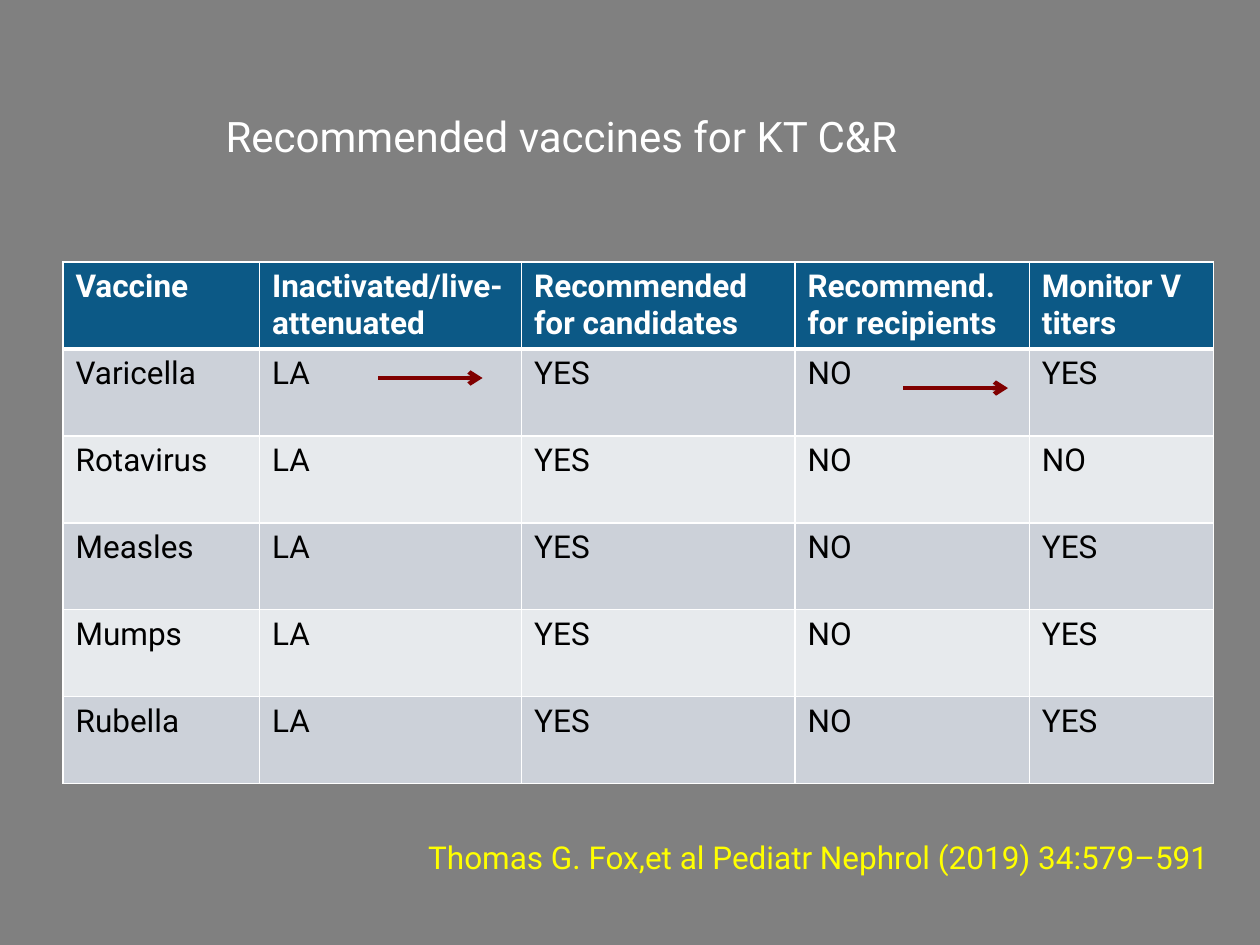
from lxml.etree import SubElement
from pptx import Presentation
from pptx.dml.color import RGBColor
from pptx.enum.shapes import MSO_CONNECTOR as Connector
from pptx.enum.text import MSO_AUTO_SIZE as AutoSize, PP_ALIGN as Align
from pptx.oxml.ns import qn
from pptx.util import Inches, Pt

# Content
TITLE = "Recommended vaccines for KT C&R"
CITATION = "Thomas G. Fox,et al Pediatr Nephrol (2019) 34:579–591"
ROWS = [
    ("Vaccine", "Inactivated/live-attenuated", "Recommended for candidates",
     "Recommend. for recipients", "Monitor V titers"),
    ("Varicella", "LA", "YES", "NO", "YES"),
    ("Rotavirus", "LA", "YES", "NO", "NO"),
    ("Measles", "LA", "YES", "NO", "YES"),
    ("Mumps", "LA", "YES", "NO", "YES"),
    ("Rubella", "LA", "YES", "NO", "YES"),
]
COLUMN_WIDTHS = [1.56, 2.08, 2.17, 1.86, 1.46]
ROW_HEIGHT = 0.69
ARROW_STARTS = [(7.17, 3.08), (3, 3)]
ARROW_LENGTH = 0.83

FONT = "Roboto"
GRAY = RGBColor(0x80, 0x80, 0x80)
WHITE = RGBColor(0xFF, 0xFF, 0xFF)
BLACK = RGBColor(0, 0, 0)
YELLOW = RGBColor(0xFF, 0xFF, 0)
DARK_RED = RGBColor(0x80, 0, 0)
HEADER_BLUE = RGBColor(0x0C, 0x59, 0x86)
BANDS = [RGBColor(0xE7, 0xEA, 0xED), RGBColor(0xCC, 0xD1, 0xD9)]


def write(frame, text, size=18, color=BLACK, bold=False, align=Align.LEFT):
    paragraph = frame.paragraphs[0]
    paragraph.alignment = align
    run = paragraph.add_run()
    run.text = text
    font = run.font
    font.name, font.size, font.bold = FONT, Pt(size), bold
    font.color.rgb = color


def add_label(slide, text, box, wrap=True, **text_format):
    frame = slide.shapes.add_textbox(*map(Inches, box)).text_frame
    frame.word_wrap = wrap
    frame.auto_size = AutoSize.SHAPE_TO_FIT_TEXT
    write(frame, text, **text_format)


def set_borders(cell, top=1, bottom=1):
    properties = cell._tc.get_or_add_tcPr()
    for side, width in (("L", 1), ("R", 1), ("T", top), ("B", bottom)):
        line = SubElement(properties, qn(f"a:ln{side}"), w=str(Pt(width)))
        fill = SubElement(line, qn("a:solidFill"))
        SubElement(fill, qn("a:srgbClr"), val=str(WHITE))


def add_vaccine_table(slide):
    table = slide.shapes.add_table(
        len(ROWS), len(COLUMN_WIDTHS), Inches(0.5), Inches(2.08),
        Inches(sum(COLUMN_WIDTHS)), Inches(ROW_HEIGHT * len(ROWS))).table
    for column, width in zip(table.columns, COLUMN_WIDTHS):
        column.width = Inches(width)
    for r, texts in enumerate(ROWS):
        table.rows[r].height = Inches(ROW_HEIGHT)
        header = r == 0
        for c, text in enumerate(texts):
            cell = table.cell(r, c)
            set_borders(cell, top=3 if r == 1 else 1, bottom=3 if header else 1)
            cell.fill.solid()
            cell.fill.fore_color.rgb = HEADER_BLUE if header else BANDS[r % 2]
            write(cell.text_frame, text, bold=header,
                  color=WHITE if header else BLACK)


def add_arrow(slide, x, y):
    arrow = slide.shapes.add_connector(
        Connector.STRAIGHT, Inches(x), Inches(y),
        Inches(x + ARROW_LENGTH), Inches(y))
    arrow.line.color.rgb = DARK_RED
    arrow.line.width = Pt(2.5)
    SubElement(arrow.line._get_or_add_ln(), qn("a:tailEnd"), type="arrow")
    SubElement(arrow._element.spPr, qn("a:effectLst"))


def main():
    deck = Presentation()
    deck.slide_width, deck.slide_height = Inches(10), Inches(7.5)
    slide = deck.slides.add_slide(deck.slide_layouts[6])
    slide.background.fill.solid()
    slide.background.fill.fore_color.rgb = GRAY

    add_vaccine_table(slide)

    # Title and citation
    add_label(slide, TITLE, (-0.17, 0.83, 9.25, 0.5),
              size=24, color=WHITE, align=Align.CENTER)
    add_label(slide, CITATION, (3.3, 6.6, 6.45, 0.4), wrap=False, color=YELLOW)

    # Arrows in the varicella row
    for x, y in ARROW_STARTS:
        add_arrow(slide, x, y)

    deck.save("out.pptx")


if __name__ == "__main__":
    main()
